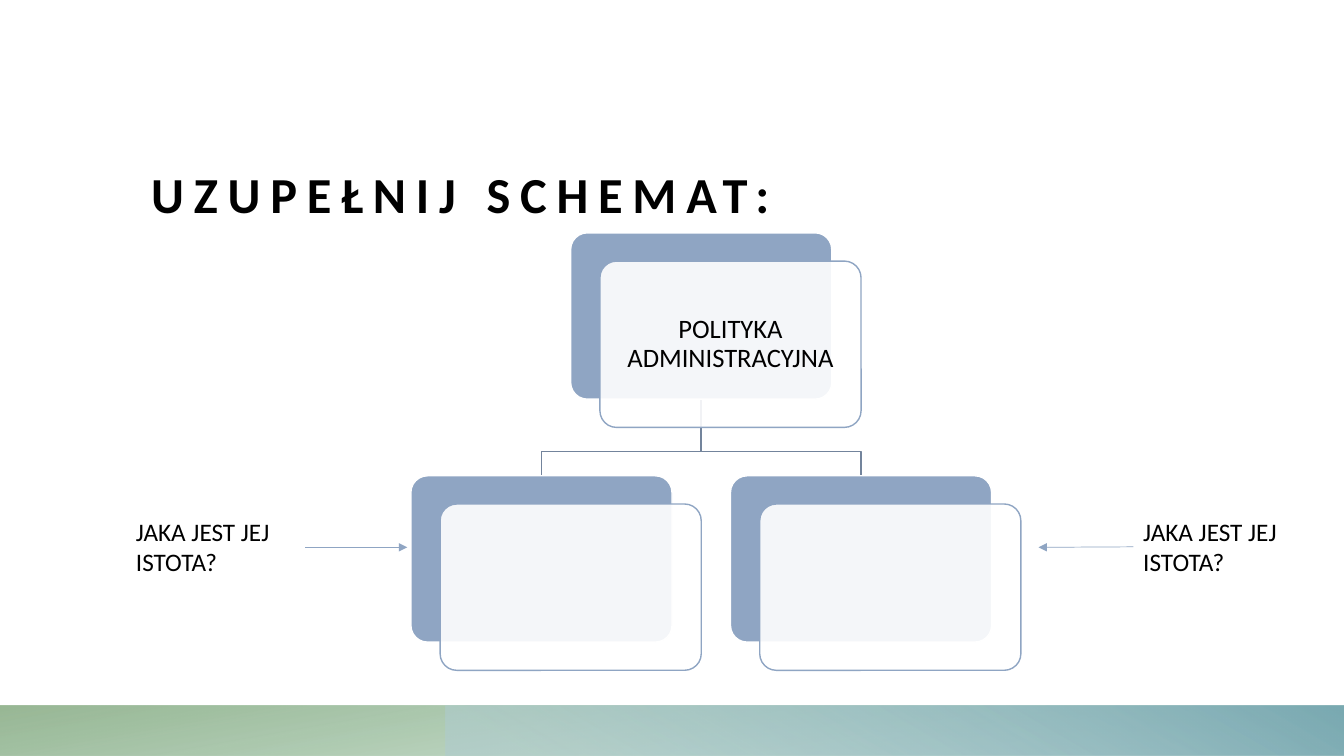
import pptx
import pptx.dml.color
import pptx.enum.dml
import pptx.enum.shapes
import pptx.enum.text
import pptx.oxml
import pptx.oxml.ns
import pptx.util
from pptx.util import Inches

SHAPE = pptx.enum.shapes.MSO_SHAPE
ALIGN = pptx.enum.text.PP_ALIGN
ANCHOR = pptx.enum.text.MSO_ANCHOR
FIT = pptx.enum.text.MSO_AUTO_SIZE
DRAWING = pptx.oxml.ns.nsdecls("a")


def colour(value):
    return pptx.dml.color.RGBColor.from_string(value)


def set_all(target, values):
    for name, value in values.items():
        setattr(target, name, value)


class Page:
    font = "Calibri"
    ink = "000000"
    blue = "8FA5C3"
    branch_line = "73849C"
    white = "FFFFFF"
    card_size = (2.59, 1.65)
    card_shift = (0.29, 0.28)

    def __init__(self, deck):
        self.slide = deck.slides.add_slide(deck.slide_layouts[6])
        self.shapes = self.slide.shapes

    def line(self, shape, value, width):
        shape.line.color.rgb = colour(value)
        shape.line.width = pptx.util.Pt(width)

    def band(self, left, width, stops, angle, rotation=0):
        """Mirrored bottom strip; stops are (position, colour, opacity) in percent."""
        shape = self.shapes.add_shape(
            SHAPE.RECTANGLE, Inches(left), Inches(7), Inches(width), Inches(0.5))
        set_all(shape, {"rotation": rotation})
        shape.shadow.inherit = False
        shape.line.fill.background()
        marks = "".join(
            f'<a:gs pos="{place * 1000}"><a:srgbClr val="{value}">'
            f'<a:alpha val="{opacity * 1000}"/></a:srgbClr></a:gs>'
            for place, value, opacity in stops)
        gradient = pptx.oxml.parse_xml(
            f'<a:gradFill {DRAWING} rotWithShape="1"><a:gsLst>{marks}</a:gsLst>'
            f'<a:lin ang="{angle * 60000}" scaled="0"/></a:gradFill>')
        properties = shape._element.spPr
        properties.xfrm.set("flipH", "1")
        properties.find(pptx.oxml.ns.qn("a:prstGeom")).addnext(gradient)

    def text(self, words, box, size, frame_format=None, para_format=None,
             bold=False, inset=None, spacing=None):
        shape = self.shapes.add_textbox(*map(Inches, box))
        frame = shape.text_frame
        set_all(frame, {"word_wrap": True, **(frame_format or {})})
        if inset is not None:
            for side in ("left", "top", "right", "bottom"):
                setattr(frame, f"margin_{side}", Inches(inset))
        para = frame.paragraphs[0]
        set_all(para, para_format or {})
        span = para.add_run()
        span.text = words
        set_all(span.font, {"name": self.font, "size": pptx.util.Pt(size), "bold": bold})
        span.font.color.rgb = colour(self.ink)
        if spacing:
            span.font._element.set("spc", str(spacing * 100))
        return shape

    def panel(self, left, top, fill, outline, opacity=100):
        shape = self.shapes.add_shape(
            SHAPE.ROUNDED_RECTANGLE, *map(Inches, (left, top, *self.card_size)))
        shape.adjustments[0] = 0.1
        shape.shadow.inherit = False
        shape.fill.solid()
        shape.fill.fore_color.rgb = colour(fill)
        if opacity < 100:
            shade = shape._element.spPr.find(".//" + pptx.oxml.ns.qn("a:srgbClr"))
            shade.append(pptx.oxml.parse_xml(
                f'<a:alpha {DRAWING} val="{opacity * 1000}"/>'))
        self.line(shape, outline, 1)

    def card(self, left, top, words=None):
        """Blue panel with a translucent white panel, and any words, in front."""
        self.panel(left, top, self.blue, self.white)
        front_left, front_top = left + self.card_shift[0], top + self.card_shift[1]
        self.panel(front_left, front_top, self.white, self.blue, opacity=90)
        if words:
            width, height = self.card_size
            self.text(words, (front_left + 0.05, front_top + 0.05, width - 0.1, height - 0.1),
                      19, {"vertical_anchor": ANCHOR.MIDDLE},
                      {"alignment": ALIGN.CENTER, "line_spacing": 0.9}, inset=0.08)

    def branch(self, points):
        start, *others = [tuple(map(Inches, point)) for point in points]
        builder = self.shapes.build_freeform(*start)
        builder.add_line_segments(others, close=False)
        shape = builder.convert_to_shape()
        shape.shadow.inherit = False
        shape.fill.background()
        self.line(shape, self.branch_line, 1)

    def arrow(self, start, end, source=None):
        """Arrow to end; a source shape is joined at its left side."""
        connector = self.shapes.add_connector(
            pptx.enum.shapes.MSO_CONNECTOR.STRAIGHT, *map(Inches, (*start, *end)))
        if source is not None:
            connector.begin_connect(source, 1)
        self.line(connector, self.blue, 0.5)
        connector.line._get_or_add_ln().append(
            pptx.oxml.parse_xml(f'<a:tailEnd {DRAWING} type="triangle"/>'))
        connector._element.spPr.append(pptx.oxml.parse_xml(f"<a:effectLst {DRAWING}/>"))


def main():
    deck = pptx.Presentation()
    set_all(deck, {"slide_width": Inches(13.33), "slide_height": Inches(7.5)})
    page = Page(deck)

    page.band(0, 13.33, [(14, "77AF89", 28), (100, "86AB82", 85)], 100, rotation=180)
    page.band(4.42, 8.91, [(9, "AFCCD1", 55), (99, "7AAAB2", 100)], 240)
    page.text("UZUPEŁNIJ SCHEMAT:", (1.5, 0.87, 11.2, 1.35), 36,
              {"vertical_anchor": ANCHOR.BOTTOM}, bold=True, inset=0, spacing=7)

    width, height = page.card_size
    root_left, root_top, child_top, child_offset = 5.66, 2.31, 4.72, 1.585
    root_middle, root_bottom, bend = root_left + width / 2, root_top + height, 4.48
    offsets = (-child_offset, child_offset)
    for offset in offsets:
        child_middle = root_middle + offset
        page.branch([(root_middle, root_bottom), (root_middle, bend),
                     (child_middle, bend), (child_middle, child_top)])
    page.card(root_left, root_top, "POLITYKA ADMINISTRACYJNA")
    for offset in offsets:
        page.card(root_left + offset, child_top)

    questions = [
        page.text("JAKA JEST JEJ ISTOTA?", (left, 5.07, 2.09, 0.71), 18,
                  {"auto_size": FIT.SHAPE_TO_FIT_TEXT})
        for left in (1.25, 11.24)]
    page.arrow((3.03, 5.43), (4.04, 5.43))
    page.arrow((11.24, 5.43), (10.3, 5.43), source=questions[1])

    deck.save("out.pptx")


if __name__ == "__main__":
    main()
